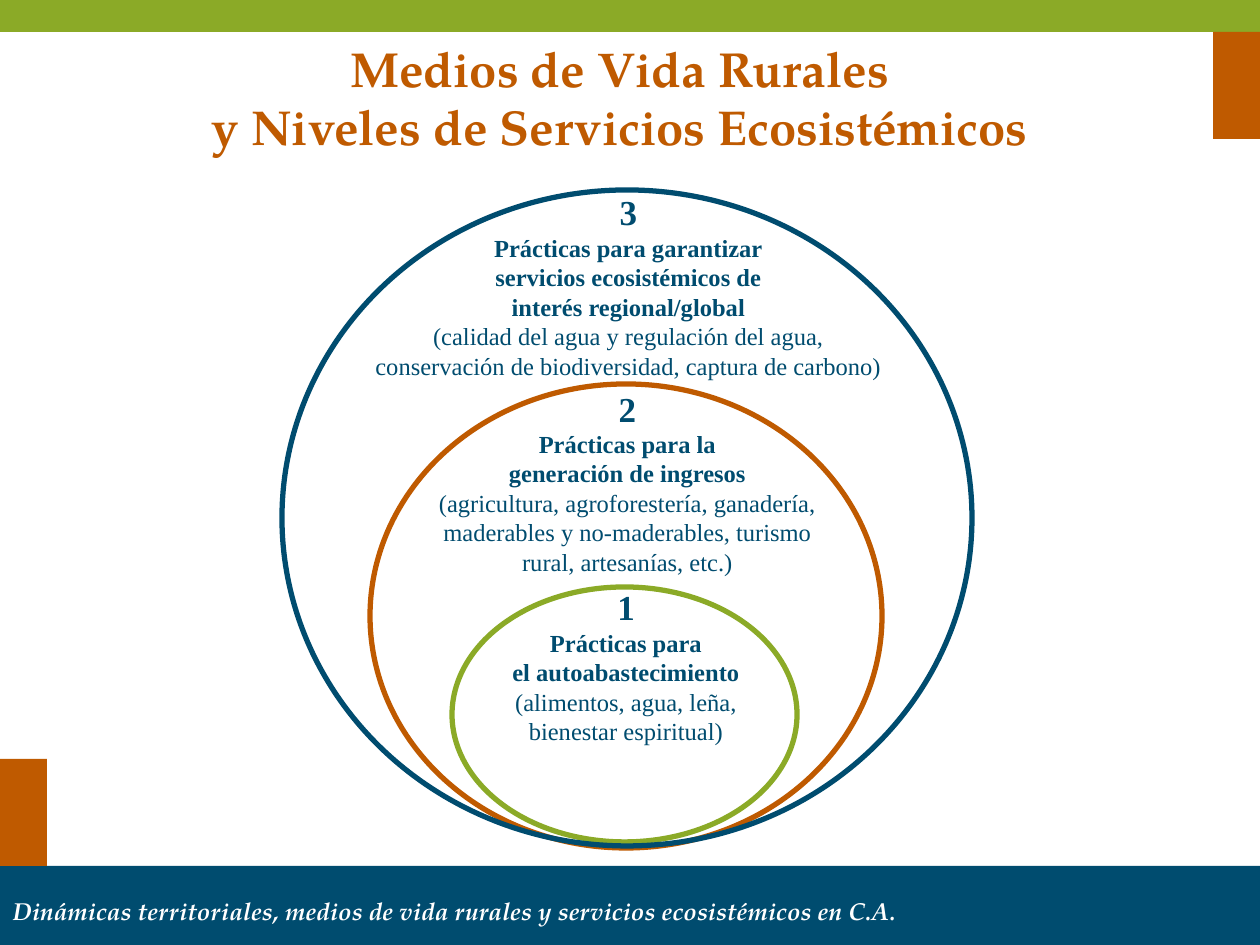
from copy import deepcopy
from dataclasses import dataclass

from pptx import Presentation
from pptx.dml.color import RGBColor as Color
from pptx.enum.shapes import MSO_SHAPE as Shape
from pptx.enum.text import MSO_ANCHOR as Anchor, PP_ALIGN as Align
from pptx.oxml.ns import qn
from pptx.util import Emu, Pt

WIDTH, HEIGHT = 1260, 945


@dataclass(frozen=True)
class Theme:
    """Colours, fonts and type sizes of the slide."""
    blue: str = "004C6F"
    green: str = "8BAA27"
    orange: str = "BF5A00"
    white: str = "FFFFFF"
    display: str = "TeX Gyre Pagella"
    body: str = "Times New Roman"
    title: int = 28
    number: int = 20
    text: int = 14
    outline: int = 3


THEME = Theme()

LEVELS = [
    dict(box=(452, 587, 345, 255), text_width=306, text_height=190, rise=9,
         color=THEME.green, number="1",
         headings=["Prácticas para", "el autoabastecimiento"],
         examples="(alimentos, agua, leña, bienestar espiritual)"),
    dict(box=(370, 384, 512, 464), text_width=441, text_height=169, rise=5,
         color=THEME.orange, number="2",
         headings=["Prácticas para la\ngeneración de ingresos"],
         examples="(agricultura, agroforestería, ganadería, "
                  "maderables y no-maderables, turismo rural, artesanías, etc.)"),
    dict(box=(282, 190, 690, 656), text_width=543, text_height=176, rise=7,
         color=THEME.blue, number="3",
         headings=["Prácticas para garantizar\nservicios ecosistémicos de\n"
                   "interés regional/global"],
         examples="(calidad del agua y regulación del agua, "
                  "conservación de biodiversidad, captura de carbono)"),
]


def px(length):
    """Turn px into EMU."""
    return Emu(round(length * 914400 / 126))


def add_block(slide, box, color):
    """Add a plain filled rectangle."""
    shape = slide.shapes.add_shape(Shape.RECTANGLE, *map(px, box))
    shape.shadow.inherit = False
    shape.fill.solid()
    shape.fill.fore_color.rgb = Color.from_string(color)
    shape.line.fill.background()
    return shape


def add_ring(slide, box, color):
    """Add an unfilled ellipse."""
    shape = slide.shapes.add_shape(Shape.OVAL, *map(px, box))
    shape.shadow.inherit = False
    shape.fill.background()
    shape.line.color.rgb = Color.from_string(color)
    shape.line.width = Pt(THEME.outline)


def add_frame(slide, box, inset_x=13, inset_y=6):
    """Add a wrapping text box and return its text frame."""
    frame = slide.shapes.add_textbox(*map(px, box)).text_frame
    frame.word_wrap = True
    frame.margin_left = frame.margin_right = px(inset_x)
    frame.margin_top = frame.margin_bottom = px(inset_y)
    return frame


def write(frame, text, *, size, color, font=THEME.body, bold=True,
          italic=False, align=Align.CENTER):
    """Write one formatted paragraph, with line breaks at newlines."""
    paragraph = frame.paragraphs[0]
    if paragraph.runs:
        paragraph = frame.add_paragraph()
    paragraph.text = text
    paragraph.alignment = align
    for run in paragraph.runs:
        run.font.name = font
        run.font.size = Pt(size)
        run.font.bold = bold
        run.font.italic = italic
        run.font.color.rgb = Color.from_string(color)
    properties = paragraph.runs[0]._r.find(qn("a:rPr"))
    for line_break in paragraph._p.findall(qn("a:br")):
        line_break.append(deepcopy(properties))


def draw_bands(slide, box):
    """Draw the top band, the two side tabs and the footer."""
    left, top, width, height = box
    band, tab_width, tab_height, footer = 32, 47, 107, 79
    footer_top = top + height - footer
    add_block(slide, (left, footer_top, width, footer), THEME.blue)
    add_block(slide, (left, top, width, band), THEME.green)
    add_block(slide, (left + width - tab_width, top + band, tab_width, tab_height),
              THEME.orange)
    add_block(slide, (left, footer_top - tab_height, tab_width, tab_height),
              THEME.orange)
    frame = add_frame(slide, (left, footer_top + 10, width, footer - 10))
    frame.vertical_anchor = Anchor.MIDDLE
    write(frame, "Dinámicas territoriales, medios de vida rurales y "
          "servicios ecosistémicos en C.A.", size=THEME.text, color=THEME.white,
          font=THEME.display, italic=True, align=Align.LEFT)


def draw_title(slide, box):
    """Write the two-line title."""
    write(add_frame(slide, box),
          "Medios de Vida Rurales\ny Niveles de Servicios Ecosistémicos",
          size=THEME.title, color=THEME.orange, font=THEME.display)


def draw_level(slide, box, text_width, text_height, rise, color, number,
               headings, examples):
    """Draw one level: its text near the top and the ring around it."""
    left, top, width, height = box
    text_left = left + (width - text_width) // 2 + 2
    frame = add_frame(slide, (text_left, top - rise, text_width, text_height), 15, 8)
    write(frame, number, size=THEME.number, color=THEME.blue)
    for heading in headings:
        write(frame, heading, size=THEME.text, color=THEME.blue)
    write(frame, examples, size=THEME.text, color=THEME.blue, bold=False)
    add_ring(slide, box, color)


def main():
    """Build and save the slide."""
    presentation = Presentation()
    presentation.slide_width, presentation.slide_height = px(WIDTH), px(HEIGHT)
    slide = presentation.slides.add_slide(presentation.slide_layouts[6])
    draw_bands(slide, (0, 0, WIDTH, HEIGHT))
    for level in LEVELS:
        draw_level(slide, **level)
    draw_title(slide, (0, 32, 1239, 122))
    presentation.save("out.pptx")


if __name__ == "__main__":
    main()
